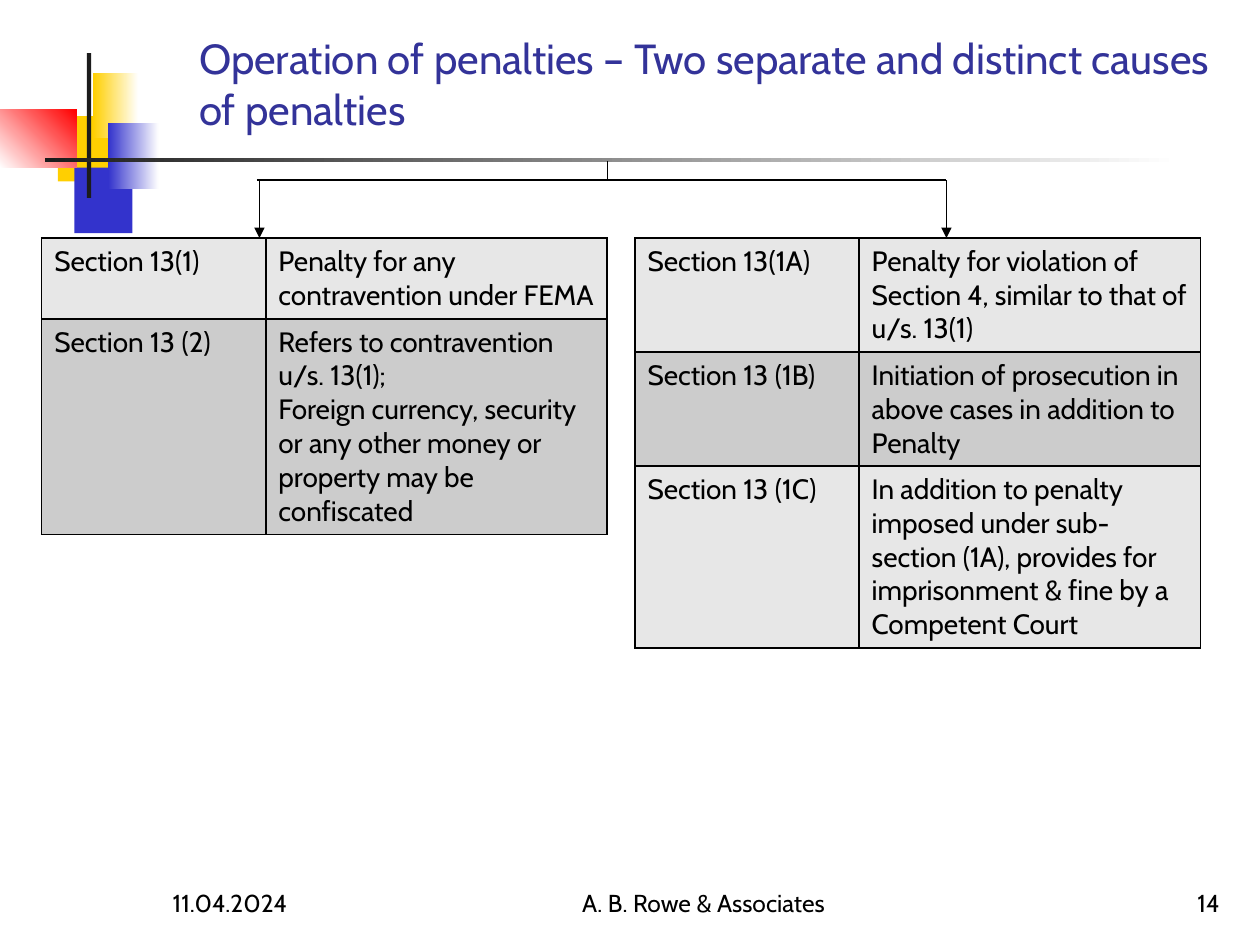
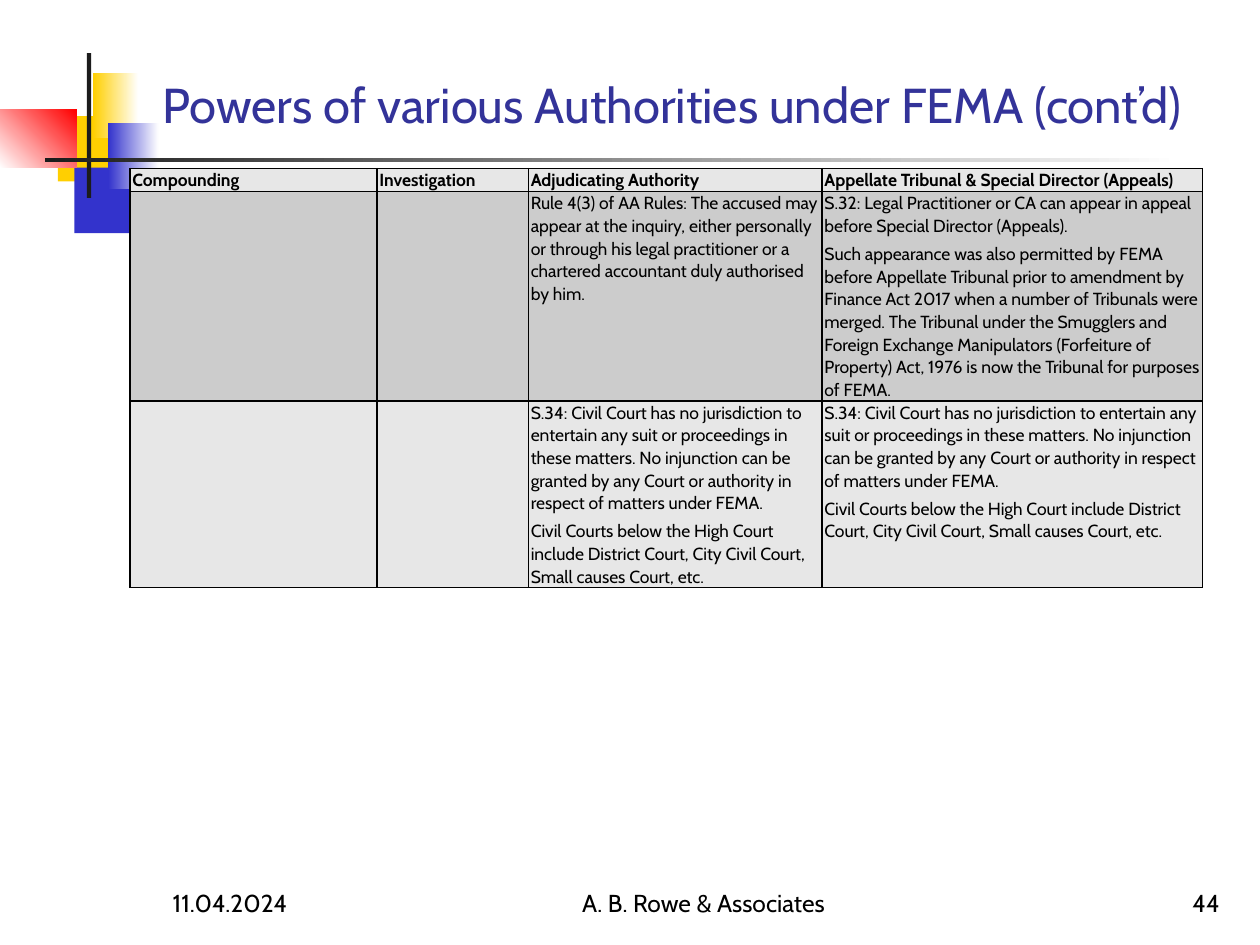
from lxml import etree
from pptx import Presentation
from pptx.dml.color import RGBColor
from pptx.enum import shapes, text
from pptx.oxml import ns
from pptx.util import Cm, Pt

FONT = "Cabin"
BLACK = RGBColor(0x00, 0x00, 0x00)
WHITE = RGBColor(0xFF, 0xFF, 0xFF)
INK = RGBColor(0x1C, 0x1C, 0x1C)
YELLOW = RGBColor(0xFF, 0xCF, 0x01)
BLUE = RGBColor(0x33, 0x33, 0xCC)
RED = RGBColor(0xFF, 0x00, 0x00)
TITLE_BLUE = RGBColor(0x33, 0x33, 0x99)
BANDS = (RGBColor(0xE7, 0xE7, 0xE7), RGBColor(0xCC, 0xCC, 0xCC))
LEFT, CENTER, RIGHT = text.PP_ALIGN.LEFT, text.PP_ALIGN.CENTER, text.PP_ALIGN.RIGHT


def write(frame, lines, size, color=BLACK, bold=False, align=LEFT):
    """Fill a text frame with one paragraph per line and return the paragraphs."""
    for number, line in enumerate(lines):
        paragraph = frame.paragraphs[0] if number == 0 else frame.add_paragraph()
        paragraph.alignment = align
        run = paragraph.add_run()
        run.text = line
        run.font.name, run.font.size, run.font.bold = FONT, Pt(size), bold
        run.font.color.rgb = color
    return frame.paragraphs


def add_grid(slide, left, top, widths, heights, rows, size, compact=False):
    """Add a bordered, banded table; compact means tight cells and a bold header."""
    grid = slide.shapes.add_table(len(heights), len(widths), Cm(left), Cm(top),
                                  Cm(sum(widths)), Cm(sum(heights))).table
    grid.first_row = grid.horz_banding = False
    for column, width in zip(grid.columns, widths):
        column.width = Cm(width)
    for r, (height, row) in enumerate(zip(heights, rows)):
        grid.rows[r].height = Cm(height)
        for c, lines in enumerate(row):
            cell = grid.cell(r, c)
            if compact:
                cell.margin_left = cell.margin_right = Cm(0.05)
                cell.margin_top = cell.margin_bottom = 0
            properties = cell._tc.get_or_add_tcPr()
            for side in ("a:lnL", "a:lnR", "a:lnT", "a:lnB"):
                border = etree.SubElement(properties, ns.qn(side), w=str(Pt(1)))
                border_fill = etree.SubElement(border, ns.qn("a:solidFill"))
                etree.SubElement(border_fill, ns.qn("a:srgbClr"), val=str(BLACK))
            cell.fill.solid()
            cell.fill.fore_color.rgb = BANDS[r % 2]
            if lines:
                for paragraph in write(cell.text_frame, lines, size, bold=compact and r == 0):
                    if compact:
                        paragraph.line_spacing = 1.07
                        paragraph.space_after = Pt(3)


prs = Presentation()
prs.slide_width, prs.slide_height = Cm(25.4), Cm(19.05)
layout = prs.slide_layouts[5]
for placeholder in list(layout.placeholders):
    if placeholder.placeholder_format.type != shapes.PP_PLACEHOLDER.TITLE:
        placeholder.element.getparent().remove(placeholder.element)

# Title and footer of each slide
titles = [
    ("Operation of penalties – Two separate and distinct causes of penalties",
     24, (3.76, 0.18, 21.64, 2.64), "14"),
    ("Powers of various Authorities under FEMA (cont’d)",
     28, (3.02, 0.43, 22.38, 2.39), "44"),
]
for heading, size, box, page in titles:
    slide = prs.slides.add_slide(layout)
    title = slide.shapes.title
    title.left, title.top, title.width, title.height = map(Cm, box)
    title.text_frame.vertical_anchor = text.MSO_ANCHOR.BOTTOM
    title.text_frame.auto_size = text.MSO_AUTO_SIZE.NONE
    write(title.text_frame, [heading], size, TITLE_BLUE)
    for words, left, width, align in (("11.04.2024", 3.23, 5.28, LEFT),
                                      (page, 19.56, 5.28, RIGHT),
                                      ("A. B. Rowe & Associates", 10.16, 8.05, CENTER)):
        footer = slide.shapes.add_textbox(Cm(left), Cm(17.35), Cm(width), Cm(1.27)).text_frame
        footer.word_wrap = True
        footer.vertical_anchor = text.MSO_ANCHOR.BOTTOM
        write(footer, [words], 14, align=align)

penalties, powers = prs.slides

# Corner emblem and rule: drawn once, then moved to the shared layout
emblem = [
    ((1.17, 2.34, 1.22, 1.32), (YELLOW,), 0),
    ((1.5, 3.38, 1.17, 1.32), (BLUE,), 0),
    ((1.88, 1.47, 0.91, 1.32), (YELLOW, WHITE), 0),
    ((2.18, 2.49, 1.02, 1.32), (BLUE, WHITE), 0),
    ((0, 2.21, 1.55, 1.17), (WHITE, RED), 45),
    ((1.75, 1.07, 0.09, 2.92), (INK,), 0),
    ((0.91, 3.18, 22.86, 0.09), (INK, WHITE), 0),
]
blocks = []
for box, colors, angle in emblem:
    block = penalties.shapes.add_shape(shapes.MSO_SHAPE.RECTANGLE, *map(Cm, box))
    block.shadow.inherit = False
    block.line.fill.background()
    if len(colors) == 1:
        block.fill.solid()
        block.fill.fore_color.rgb = colors[0]
    else:
        block.fill.gradient()
        block.fill.gradient_angle = angle
        for stop, color in zip(block.fill.gradient_stops, colors):
            stop.color.rgb = color
    blocks.append(block)
for position, block in enumerate(blocks, start=2):
    layout.shapes.element.insert(position, block.element)

# Two causes of penalties
section_widths = (4.52, 6.88)
add_grid(penalties, 0.84, 4.8, section_widths, (1.63, 4.34), [
    (["Section 13(1)"], ["Penalty for any contravention under FEMA"]),
    (["Section 13 (2)"],
     ["Refers to contravention u/s. 13(1);",
      "Foreign currency, security or any other money or property may be confiscated"]),
], 16)
add_grid(penalties, 12.8, 4.8, section_widths, (2.3, 2.3, 3.66), [
    (["Section 13(1A)"],
     ["Penalty for violation of Section 4, similar to that of u/s. 13(1)"]),
    (["Section 13 (1B)"],
     ["Initiation of prosecution in above cases in addition to Penalty"]),
    (["Section 13 (1C)"],
     ["In addition to penalty imposed under sub-section (1A), provides for "
      "imprisonment & fine by a Competent Court"]),
], 16)

for ends, arrow in (((5.18, 3.63, 19.08, 3.63), False),
                    ((5.23, 3.63, 5.23, 4.8), True),
                    ((19.08, 3.63, 19.08, 4.8), True),
                    ((12.24, 3.63, 12.24, 3.25), False)):
    branch = penalties.shapes.add_connector(shapes.MSO_CONNECTOR.STRAIGHT, *map(Cm, ends))
    branch.line.color.rgb = BLACK
    branch.line.width = Pt(0.75)
    if arrow:
        etree.SubElement(branch.line._get_or_add_ln(), ns.qn("a:tailEnd"), type="triangle")
    etree.SubElement(branch.element.spPr, ns.qn("a:effectLst"))

# Powers of the authorities
civil_courts = [
    "S.34: Civil Court has no jurisdiction to entertain any suit or proceedings in these "
    "matters. No injunction can be granted by any Court or authority in respect of matters "
    "under FEMA.",
    "Civil Courts below the High Court include District Court, City Civil Court, "
    "Small causes Court, etc.",
]
add_grid(powers, 2.62, 3.4, (4.98, 3.05, 5.92, 7.67), (0.46, 4.22, 3.76), [
    (["Compounding"], ["Investigation"], ["Adjudicating Authority"],
     ["Appellate Tribunal & Special Director (Appeals)"]),
    ([], [],
     ["Rule 4(3) of AA Rules: The accused may appear at the inquiry, either personally or "
      "through his legal practitioner or a chartered accountant duly authorised by him."],
     ["S.32: Legal Practitioner or CA can appear in appeal before Special Director (Appeals).",
      "Such appearance was also permitted by FEMA before Appellate Tribunal prior to "
      "amendment by Finance Act 2017 when a number of Tribunals were merged. The Tribunal "
      "under the Smugglers and Foreign Exchange Manipulators (Forfeiture of Property) Act, "
      "1976 is now the Tribunal for purposes of FEMA."]),
    ([], [], civil_courts, civil_courts),
], 10, compact=True)

prs.save("out.pptx")
